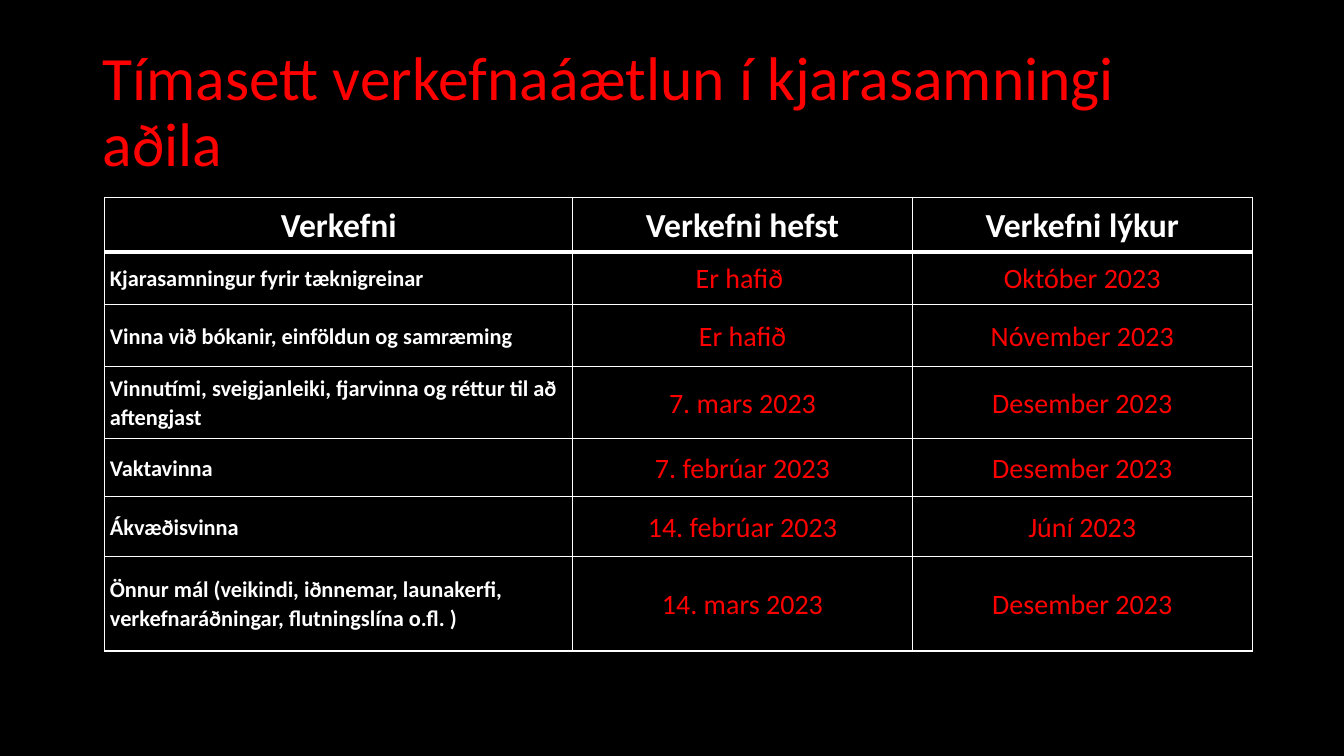
import pptx
import pptx.dml.color
import pptx.enum.text
import pptx.oxml
import pptx.oxml.ns
import pptx.util
from dataclasses import dataclass

TITLE = "Tímasett verkefnaáætlun í kjarasamningi aðila"
HEADER = ("Verkefni", "Verkefni hefst", "Verkefni lýkur")
TASKS = [
    ("Kjarasamningur fyrir tæknigreinar", "Er hafið ", "Október 2023"),
    ("Vinna við bókanir, einföldun og samræming", "Er hafið", "Nóvember 2023"),
    ("Vinnutími, sveigjanleiki, fjarvinna og réttur til að aftengjast",
     "7. mars 2023", "Desember 2023"),
    ("Vaktavinna", "7. febrúar 2023", "Desember 2023"),
    ("Ákvæðisvinna", "14. febrúar 2023", "Júní 2023"),
    ("Önnur mál (veikindi, iðnnemar, launakerfi, verkefnaráðningar, flutningslína o.fl. )",
     "14. mars 2023", "Desember 2023"),
]
SLIDE_SIZE = (13.33, 7.5)
TITLE_AREA = (0.92, 0.4, 11.5, 1.45)
TABLE_CORNER = (1.04, 1.96)
COLUMN_WIDTHS = (4.64, 3.37, 3.37)
ROW_HEIGHTS = (0.54, 0.52, 0.62, 0.71, 0.58, 0.59, 0.94)


@dataclass(frozen=True)
class Theme:
    font: str = "Calibri"
    background: str = "000000"
    accent: str = "FF0000"
    light: str = "FFFFFF"
    title_size: int = 44
    header_size: int = 24
    task_size: int = 16
    date_size: int = 20
    rule: int = 1
    header_rule: int = 3


THEME = Theme()
Inches = pptx.util.Inches
Pt = pptx.util.Pt
ALIGN = pptx.enum.text.PP_ALIGN
MIDDLE = pptx.enum.text.MSO_ANCHOR.MIDDLE


def paint(fill, color):
    fill.solid()
    fill.fore_color.rgb = pptx.dml.color.RGBColor.from_string(color)


def write(frame, text, size, color, bold=False, align=ALIGN.LEFT, spacing=1.07):
    para = frame.paragraphs[0]
    para.alignment = align
    para.line_spacing = spacing
    span = para.add_run()
    span.text = text
    span.font.name = THEME.font
    span.font.size = Pt(size)
    span.font.bold = bold
    span.font.color.rgb = pptx.dml.color.RGBColor.from_string(color)
    return para


def add_borders(cell, top, bottom):
    """Rule all four sides; must run before the cell is filled."""
    properties = cell._tc.get_or_add_tcPr()
    widths = {"lnL": THEME.rule, "lnR": THEME.rule, "lnT": top, "lnB": bottom}
    for side, width in widths.items():
        properties.append(pptx.oxml.parse_xml(
            f'<a:{side} {pptx.oxml.ns.nsdecls("a")} w="{Pt(width)}"><a:solidFill>'
            f'<a:srgbClr val="{THEME.light}"/></a:solidFill></a:{side}>'))


def add_title(page):
    frame = page.shapes.add_textbox(*map(Inches, TITLE_AREA)).text_frame
    frame.word_wrap = True
    frame.vertical_anchor = MIDDLE
    write(frame, TITLE, THEME.title_size, THEME.accent, spacing=0.9)


def fill_cell(cell, text, row, column):
    top = THEME.header_rule if row == 1 else THEME.rule
    bottom = THEME.header_rule if row == 0 else THEME.rule
    add_borders(cell, top, bottom)
    paint(cell.fill, THEME.background)
    cell.vertical_anchor = MIDDLE
    cell.margin_left = cell.margin_right = Inches(0.05)
    cell.margin_top = cell.margin_bottom = 0
    if row == 0:
        style = (THEME.header_size, THEME.light, True, ALIGN.CENTER)
    elif column == 0:
        style = (THEME.task_size, THEME.light, True, ALIGN.LEFT)
    else:
        style = (THEME.date_size, THEME.accent, False, ALIGN.CENTER)
    write(cell.text_frame, text, *style).space_after = Pt(8)


def add_schedule(page):
    size = (sum(COLUMN_WIDTHS), sum(ROW_HEIGHTS))
    table = page.shapes.add_table(len(ROW_HEIGHTS), len(COLUMN_WIDTHS),
                                  *map(Inches, TABLE_CORNER + size)).table
    for column, width in zip(table.columns, COLUMN_WIDTHS):
        column.width = Inches(width)
    for row, height in zip(table.rows, ROW_HEIGHTS):
        row.height = Inches(height)
    for r, texts in enumerate([HEADER, *TASKS]):
        for c, text in enumerate(texts):
            fill_cell(table.cell(r, c), text, r, c)


def main():
    deck = pptx.Presentation()
    deck.slide_width, deck.slide_height = map(Inches, SLIDE_SIZE)
    page = deck.slides.add_slide(deck.slide_layouts[6])
    paint(page.background.fill, THEME.background)
    add_title(page)
    add_schedule(page)
    deck.save("out.pptx")


if __name__ == "__main__":
    main()
